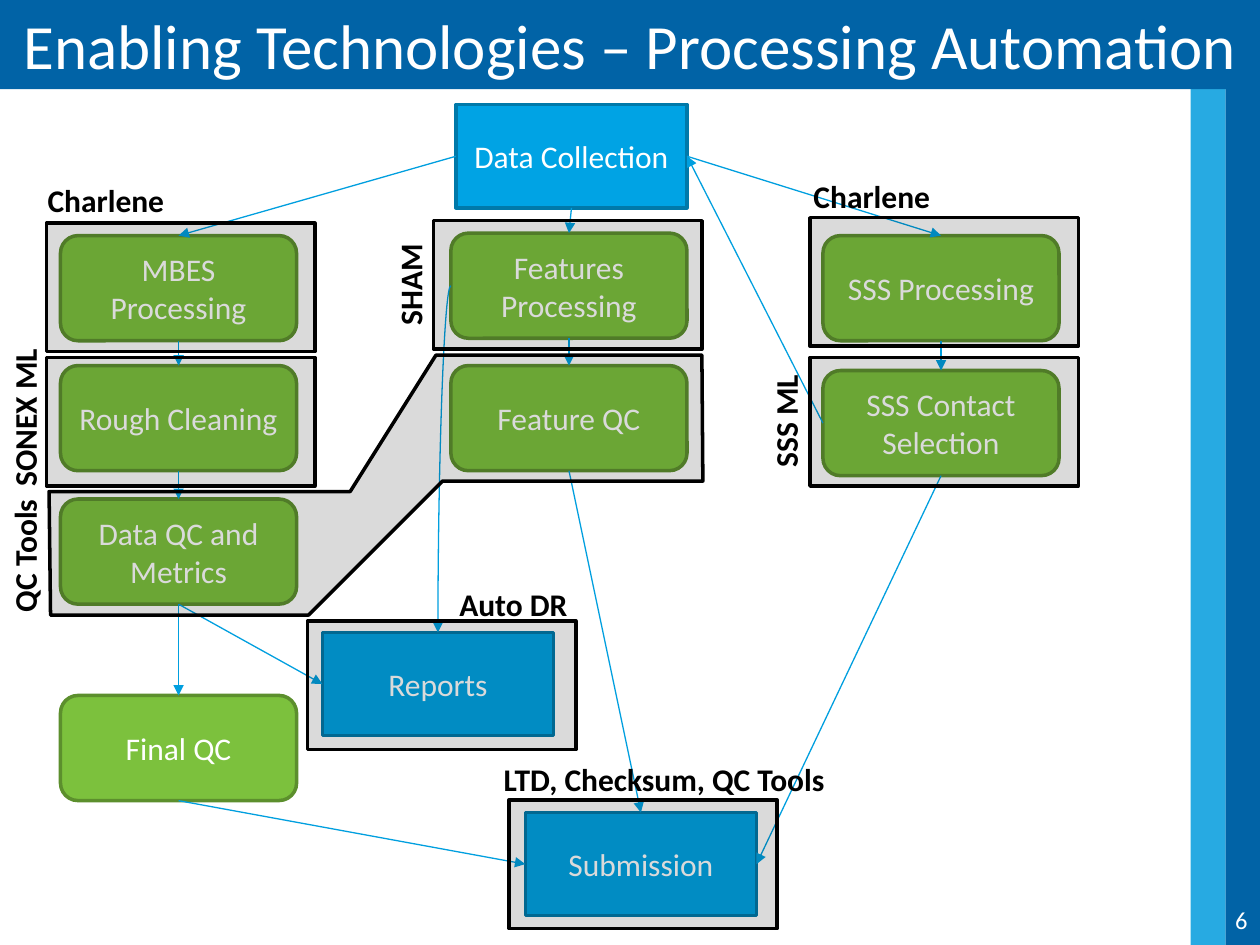
from dataclasses import dataclass

from lxml.etree import SubElement
from pptx import Presentation
from pptx.dml.color import RGBColor
from pptx.enum.shapes import MSO_CONNECTOR, MSO_SHAPE
from pptx.enum.text import MSO_ANCHOR, PP_ALIGN
from pptx.oxml.ns import qn
from pptx.shapes.autoshape import Shape
from pptx.shapes.connector import Connector
from pptx.slide import Slide
from pptx.util import Cm, Pt

WHITE = RGBColor(0xFF, 0xFF, 0xFF)
BLACK = RGBColor(0x00, 0x00, 0x00)
NAVY = RGBColor(0x01, 0x63, 0xA6)
SKY = RGBColor(0x27, 0xAA, 0xE2)
BLUE = RGBColor(0x00, 0xA3, 0xE4)
DARK_BLUE = RGBColor(0x00, 0x79, 0xA9)
GREEN = RGBColor(0x7C, 0xC1, 0x3D)
DARK_GREEN = RGBColor(0x5C, 0x8F, 0x2D)
ARROW_BLUE = RGBColor(0x00, 0x9F, 0xDF)
ZONE_GREY = RGBColor(0x0D, 0x0D, 0x0D)

TOP, LEFT, BOTTOM, RIGHT = range(4)
SLIDE_WIDTH, SLIDE_HEIGHT = 25.4, 19.05
MBES_X, FEATURES_X, SSS_X = 1.22, 9.09, 16.59
ZONE_WIDTH, ZONE_HEIGHT = 5.41, 2.59


@dataclass(frozen=True)
class NodeStyle:
    preset: MSO_SHAPE
    width: float
    height: float
    fill: RGBColor
    line: RGBColor


@dataclass(frozen=True)
class Node:
    text: str
    left: float
    top: float
    style: NodeStyle


@dataclass(frozen=True)
class Label:
    text: str
    left: float
    top: float
    width: float = 4.7
    rotation: int = 0
    alignment: PP_ALIGN = PP_ALIGN.CENTER


@dataclass(frozen=True)
class Arrow:
    source: str
    source_side: int
    target: str
    target_side: int


PROCESS = NodeStyle(MSO_SHAPE.ROUNDED_RECTANGLE, 4.76, 2.12, GREEN, DARK_GREEN)
PRODUCT = NodeStyle(MSO_SHAPE.RECTANGLE, 4.66, 2.08, BLUE, DARK_BLUE)

NODES = [
    Node("Data Collection", 9.19, 2.11, PRODUCT),
    Node("MBES Processing", MBES_X, 4.75, PROCESS),
    Node("Rough Cleaning", MBES_X, 7.37, PROCESS),
    Node("Data QC and Metrics", MBES_X, 10.06, PROCESS),
    Node("Final QC", MBES_X, 14.02, PROCESS),
    Node("Features Processing", FEATURES_X, 4.7, PROCESS),
    Node("Feature QC", FEATURES_X, 7.37, PROCESS),
    Node("SSS Processing", SSS_X, 4.75, PROCESS),
    Node("SSS Contact Selection", SSS_X, 7.47, PROCESS),
    Node("Reports", 6.5, 12.75, PRODUCT),
    Node("Submission", 10.59, 16.38, PRODUCT),
]

ARROWS = [
    Arrow("Data Collection", LEFT, "MBES Processing", TOP),
    Arrow("Data Collection", BOTTOM, "Features Processing", TOP),
    Arrow("Data Collection", RIGHT, "SSS Processing", TOP),
    Arrow("MBES Processing", BOTTOM, "Rough Cleaning", TOP),
    Arrow("Rough Cleaning", BOTTOM, "Data QC and Metrics", TOP),
    Arrow("Data QC and Metrics", BOTTOM, "Reports", LEFT),
    Arrow("Data QC and Metrics", BOTTOM, "Final QC", TOP),
    Arrow("Final QC", BOTTOM, "Submission", LEFT),
    Arrow("Features Processing", BOTTOM, "Feature QC", TOP),
    Arrow("Feature QC", BOTTOM, "Submission", TOP),
    Arrow("SSS Processing", BOTTOM, "SSS Contact Selection", TOP),
    Arrow("SSS Contact Selection", LEFT, "Data Collection", RIGHT),
    Arrow("SSS Contact Selection", BOTTOM, "Submission", RIGHT),
]

LABELS = [
    Label("Charlene", 0.71, 3.53, alignment=PP_ALIGN.LEFT),
    Label("Charlene", 16.15, 3.45, alignment=PP_ALIGN.LEFT),
    Label("SONEX ML", -1.85, 7.9, rotation=270),
    Label("QC Tools", -1.85, 10.69, rotation=270),
    Label("SHAM", 5.92, 5.23, rotation=270),
    Label("SSS ML", 13.49, 7.98, rotation=270),
    Label("Auto DR", 8.0, 11.66),
    Label("LTD, Checksum, QC Tools", 9.79, 15.19, width=7.2),
]

ZONES = [(0.94, 4.5), (0.94, 7.21), (8.74, 4.45), (16.33, 7.21), (16.33, 4.39), (6.2, 12.52), (10.26, 16.13)]
QC_TOOLS_OUTLINE = [
    (1.02, 12.4), (0.99, 9.91), (7.06, 9.91), (8.79, 7.16),
    (14.15, 7.16), (14.17, 9.7), (8.92, 9.7), (6.22, 12.4),
]


def write_text(shape: Shape, text: str, size: int, color: RGBColor, alignment: PP_ALIGN,
               bold: bool = False, anchor: MSO_ANCHOR = MSO_ANCHOR.MIDDLE) -> None:
    frame = shape.text_frame
    frame.word_wrap = True
    frame.vertical_anchor = anchor
    paragraph = frame.paragraphs[0]
    paragraph.text = text
    paragraph.alignment = alignment
    paragraph.font.name = "Calibri"
    paragraph.font.size = Pt(size)
    paragraph.font.bold = bold
    paragraph.font.color.rgb = color


def draw_bar(slide: Slide, left: float, width: float, height: float, color: RGBColor) -> Shape:
    bar = slide.shapes.add_shape(MSO_SHAPE.RECTANGLE, Cm(left), 0, Cm(width), Cm(height))
    bar.shadow.inherit = False
    bar.fill.solid()
    bar.fill.fore_color.rgb = color
    bar.line.fill.background()
    return bar


def draw_node(slide: Slide, node: Node) -> Shape:
    style = node.style
    shape = slide.shapes.add_shape(style.preset, Cm(node.left), Cm(node.top), Cm(style.width), Cm(style.height))
    shape.shadow.inherit = False
    shape.fill.solid()
    shape.fill.fore_color.rgb = style.fill
    shape.line.color.rgb = style.line
    shape.line.width = Pt(2)
    write_text(shape, node.text, 18, WHITE, PP_ALIGN.CENTER)
    return shape


def style_arrow(connector: Connector) -> None:
    connector.line.color.rgb = ARROW_BLUE
    connector.line.width = Pt(0.75)
    SubElement(connector.line._get_or_add_ln(), qn("a:tailEnd"), type="triangle")
    SubElement(connector._element.spPr, qn("a:effectLst"))


def draw_arrow(slide: Slide, arrow: Arrow, shapes: dict[str, Shape]) -> None:
    connector = slide.shapes.add_connector(MSO_CONNECTOR.STRAIGHT, 0, 0, 0, 0)
    connector.begin_connect(shapes[arrow.source], arrow.source_side)
    connector.end_connect(shapes[arrow.target], arrow.target_side)
    style_arrow(connector)


def draw_curved_arrow(slide: Slide, source: Shape, target: Shape) -> None:
    """Bend once from the left side of the source down to the top of the target."""
    connector = slide.shapes.add_connector(
        MSO_CONNECTOR.CURVE, source.left, source.top + source.height // 2,
        target.left + target.width // 2, target.top)
    connector._element.spPr.find(qn("a:prstGeom")).set("prst", "curvedConnector2")
    style_arrow(connector)


def draw_label(slide: Slide, label: Label) -> None:
    box = slide.shapes.add_textbox(Cm(label.left), Cm(label.top), Cm(label.width), Cm(1.03))
    box.rotation = label.rotation
    write_text(box, label.text, 18, BLACK, label.alignment, bold=True, anchor=MSO_ANCHOR.TOP)


def style_zone(zone: Shape) -> None:
    """Give a tool zone its see-through grey fill and black outline."""
    zone.shadow.inherit = False
    zone.fill.solid()
    zone.fill.fore_color.rgb = ZONE_GREY
    color = zone._element.spPr.find(qn("a:solidFill")).find(qn("a:srgbClr"))
    SubElement(color, qn("a:alpha"), val="15000")
    zone.line.color.rgb = BLACK
    zone.line.width = Pt(2)


def main() -> None:
    presentation = Presentation()
    presentation.slide_width, presentation.slide_height = Cm(SLIDE_WIDTH), Cm(SLIDE_HEIGHT)
    slide = presentation.slides.add_slide(presentation.slide_layouts[6])

    draw_bar(slide, 24.0, 0.71, SLIDE_HEIGHT, SKY)
    draw_bar(slide, 24.71, 0.69, SLIDE_HEIGHT, NAVY)
    title = draw_bar(slide, 0, SLIDE_WIDTH, 1.8, NAVY)
    write_text(title, "Enabling Technologies – Processing Automation", 36, WHITE, PP_ALIGN.CENTER)
    page_number = slide.shapes.add_textbox(Cm(23.85), Cm(18.03), Cm(1.55), Cm(1.02))
    write_text(page_number, "6", 14, WHITE, PP_ALIGN.RIGHT)

    shapes = {node.text: draw_node(slide, node) for node in NODES}
    for arrow in ARROWS:
        draw_arrow(slide, arrow, shapes)
    for label in LABELS:
        draw_label(slide, label)
    draw_curved_arrow(slide, shapes["Features Processing"], shapes["Reports"])

    start, *corners = [(Cm(x), Cm(y)) for x, y in QC_TOOLS_OUTLINE]
    builder = slide.shapes.build_freeform(*start)
    builder.add_line_segments(corners, close=True)
    style_zone(builder.convert_to_shape())
    for left, top in ZONES:
        style_zone(slide.shapes.add_shape(
            MSO_SHAPE.RECTANGLE, Cm(left), Cm(top), Cm(ZONE_WIDTH), Cm(ZONE_HEIGHT)))

    presentation.save("out.pptx")


if __name__ == "__main__":
    main()
